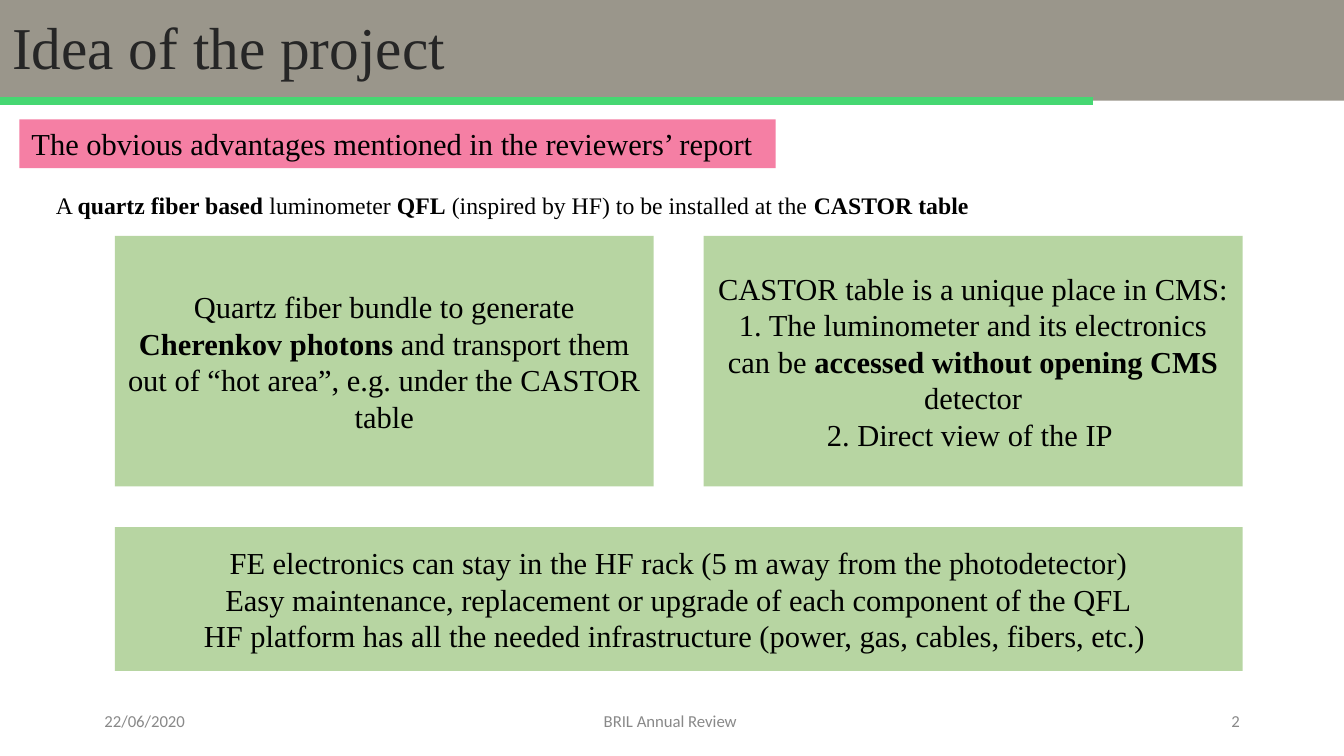
from lxml import etree
from pptx import Presentation
from pptx.dml.color import RGBColor
from pptx.enum.shapes import MSO_CONNECTOR, MSO_SHAPE
from pptx.enum.text import MSO_ANCHOR, MSO_AUTO_SIZE, PP_ALIGN
from pptx.oxml.ns import qn
from pptx.util import Pt

RECTANGLE, PROCESS = MSO_SHAPE.RECTANGLE, MSO_SHAPE.FLOWCHART_PROCESS
STRAIGHT = MSO_CONNECTOR.STRAIGHT
TOP, MIDDLE = MSO_ANCHOR.TOP, MSO_ANCHOR.MIDDLE
LEFT, CENTER, RIGHT = PP_ALIGN.LEFT, PP_ALIGN.CENTER, PP_ALIGN.RIGHT
FIT_SHAPE = MSO_AUTO_SIZE.SHAPE_TO_FIT_TEXT

SLIDE_W, SLIDE_H = 793.44, 446.4
SERIF, SANS = "Times New Roman", "Calibri"
COLORS = {"band": "9A968B", "title": "262626", "rule": "46D772", "pink": "F57FA4",
          "green": "70AD47", "text": "000000", "footer": "898989"}

FIBER_BUNDLE = [[("Quartz fiber bundle to generate ", False), ("Cherenkov photons", True),
                 (" and transport them out of “hot area”, e.g. under the CASTOR table", False)]]
CASTOR_TABLE = [
    [("CASTOR table is a unique place in CMS:", False)],
    [("1. The luminometer and its electronics can be ", False),
     ("accessed without opening CMS ", True), ("detector", False)],
    [("2. Direct view of the IP ", False)],
]
ELECTRONICS = [
    [("FE electronics can stay in the HF rack (5 m away from the photodetector)", False)],
    [("Easy maintenance, replacement or upgrade of each component of the QFL", False)],
    [("HF platform has all the needed infrastructure (power, gas, cables, fibers, etc.) ", False)],
]
SUMMARY = [[("A ", False), ("quartz fiber based", True), (" luminometer ", False), ("QFL", True),
            (" (inspired by HF) to be installed at the ", False), ("CASTOR table", True)]]


def rgb(name):
    """Return the named colour."""
    return RGBColor.from_string(COLORS[name])


def write(holder, paragraphs, size, color="text", font=SERIF, align=LEFT, anchor=MIDDLE,
          wrap=True, spacing=None):
    """Fill a shape with paragraphs of (text, bold) runs."""
    frame = holder.text_frame
    frame.word_wrap = wrap
    frame.vertical_anchor = anchor
    if not wrap:
        frame.auto_size = FIT_SHAPE
    for index, runs in enumerate(paragraphs):
        paragraph = frame.add_paragraph() if index else frame.paragraphs[0]
        paragraph.alignment = align
        if spacing:
            paragraph.line_spacing = spacing
        for text, bold in runs:
            run = paragraph.add_run()
            run.text = text
            run.font.name = font
            run.font.size = Pt(size)
            run.font.bold = bold
            run.font.color.rgb = rgb(color)


def add_panel(slide, box, fill, preset=RECTANGLE, opacity=None):
    """Add a borderless filled panel, translucent if an opacity in percent is given."""
    panel = slide.shapes.add_shape(preset, *map(Pt, box))
    panel.shadow.inherit = False
    panel.fill.solid()
    panel.fill.fore_color.rgb = rgb(fill)
    panel.line.fill.background()
    if opacity:
        color = panel.fill._xPr.find(".//" + qn("a:srgbClr"))
        etree.SubElement(color, qn("a:alpha"), val=str(opacity * 1000))
    return panel


def add_header(slide, box):
    """Draw the title band with the green rule along its lower edge."""
    left, top, width, height = box
    band = add_panel(slide, box, "band")
    write(band, [[("Idea of the project", False)]], 35, "title", spacing=0.9)
    bottom = top + height
    rule = slide.shapes.add_connector(STRAIGHT, Pt(left), Pt(bottom),
                                      Pt(left + 645), Pt(bottom))
    rule.line.color.rgb = rgb("rule")
    rule.line.width = Pt(4.5)
    etree.SubElement(rule._element.spPr, qn("a:effectLst"))


def add_intro(slide, box):
    """Place the pink callout and the summary sentence below it."""
    left, top, width, height = box
    callout = add_panel(slide, (left, top, 446.4, 28.8), "pink")
    write(callout, [[("The obvious advantages mentioned in the reviewers’ report", False)]],
          18, anchor=TOP, wrap=False)
    indent = 14.4
    summary = slide.shapes.add_textbox(Pt(left + indent), Pt(top + 38.9),
                                       Pt(width - indent), Pt(height - 38.9))
    write(summary, SUMMARY, 14, anchor=TOP, wrap=False)


def add_advantages(slide, box):
    """Arrange two green panels side by side above one of full width."""
    left, top, width, height = box
    column_gap, upper_h, lower_h = 29.5, 148, 85
    column_w = (width - column_gap) / 2
    panels = [
        ((left, top, column_w, upper_h), FIBER_BUNDLE),
        ((left + column_w + column_gap, top, column_w, upper_h), CASTOR_TABLE),
        ((left, top + height - lower_h, width, lower_h), ELECTRONICS),
    ]
    for panel_box, paragraphs in panels:
        panel = add_panel(slide, panel_box, "green", PROCESS, opacity=50)
        write(panel, paragraphs, 18, align=CENTER)


def add_footer(slide, box):
    """Spread date, event and page number over the footer."""
    left, top, width, height = box
    side_w, event_w = 178.5, 267.8
    fields = [
        ("22/06/2020", left, side_w, LEFT),
        ("BRIL Annual Review ", left + (width - event_w) / 2, event_w, CENTER),
        ("2", left + width - side_w, side_w, RIGHT),
    ]
    for text, x, field_w, align in fields:
        field = slide.shapes.add_textbox(Pt(x), Pt(top), Pt(field_w), Pt(height))
        write(field, [[(text, False)]], 9.9, "footer", SANS, align)


def main():
    """Build and save the slide."""
    deck = Presentation()
    deck.slide_width, deck.slide_height = Pt(SLIDE_W), Pt(SLIDE_H)
    slide = deck.slides.add_slide(deck.slide_layouts[6])
    add_header(slide, (0, 0, SLIDE_W, 59.5))
    add_intro(slide, (11.5, 70.5, 572.4, 63.4))
    add_advantages(slide, (67.8, 139.2, 665.8, 257))
    add_footer(slide, (54.6, 414, 684.4, 23.8))
    deck.save("out.pptx")


if __name__ == "__main__":
    main()
